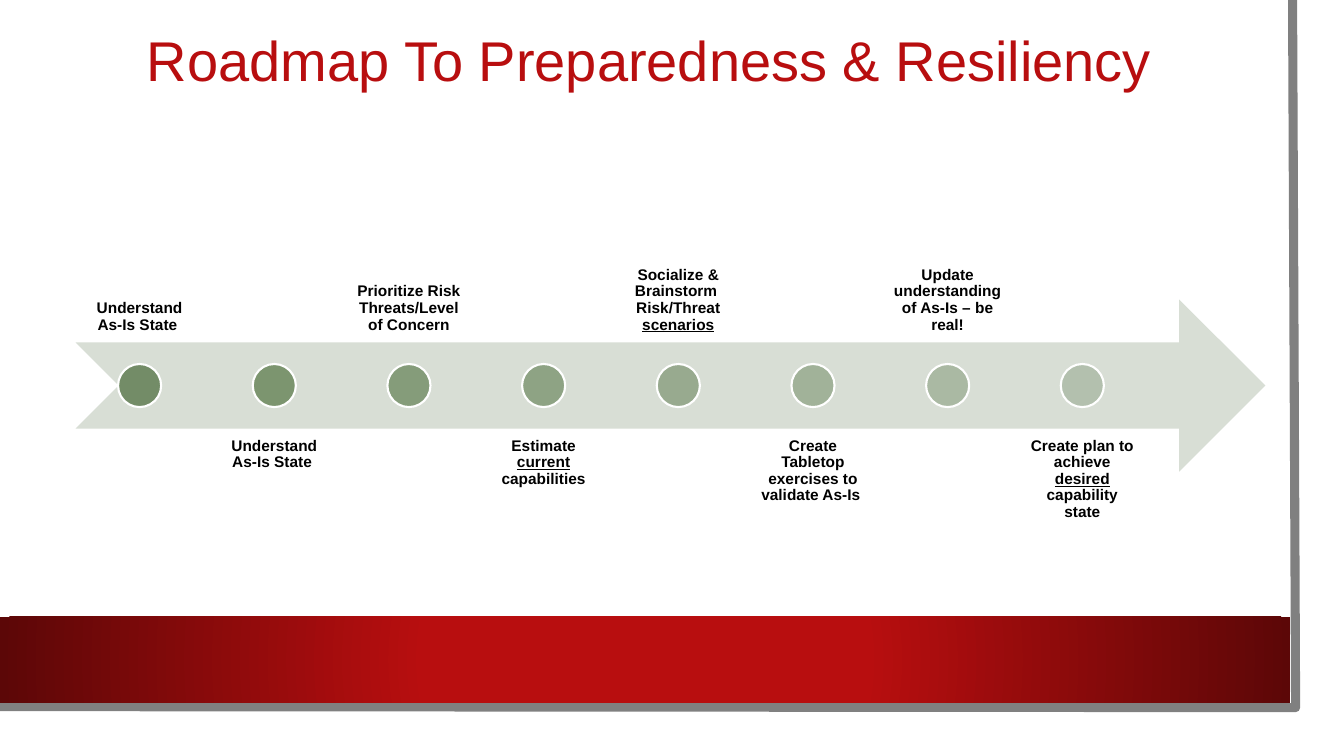
"""Build a roadmap slide with eight milestones along an arrow."""
import lxml.etree
import pptx
import pptx.dml.color
import pptx.enum.shapes
import pptx.enum.text
import pptx.oxml.ns
import pptx.util

WIDE, HIGH = 13.33, 7.5
LEFT, STEP, COL = 0.75, 9.35 / 7, 1.27
TOP, ROW = 2.97, 1.71
DOT = ROW / 4
FONT = "Arial"
KIND = pptx.enum.shapes.MSO_SHAPE
ANCHOR = pptx.enum.text.MSO_ANCHOR

HUES = {
    "page": "FFFFFF", "edge": "808080", "red": "B80E0F", "dark": "5C0707",
    "arrow": "D8DED5", "text": "000000",
    "dot0": "738C67", "dot1": "7C956F", "dot2": "859C7A", "dot3": "8EA384",
    "dot4": "98AA8F", "dot5": "A1B299", "dot6": "AAB9A3", "dot7": "B3C0AE",
}

GOALS = [
    [("Understand As-Is State ", False)],
    [("Understand As-Is State ", False)],
    [("Prioritize Risk Threats/Level of Concern", False)],
    [("Estimate ", False), ("current", True), (" capabilities", False)],
    [("Socialize & Brainstorm \nRisk/Threat ", False), ("scenarios", True)],
    [("Create Tabletop exercises to validate As-Is ", False)],
    [("Update understanding of As-Is – be real!", False)],
    [("Create plan to achieve ", False), ("desired ", True),
     ("capability state", False)],
]


def hue(name):
    """Return the named colour."""
    return pptx.dml.color.RGBColor.from_string(HUES[name])


def box(*sides):
    """Turn inches into slide lengths."""
    return [pptx.util.Inches(side) for side in sides]


def shape(slide, kind, sides, fill):
    """Add a plain filled shape without a line."""
    item = slide.shapes.add_shape(kind, *box(*sides))
    item.shadow.inherit = False
    item.fill.solid()
    item.fill.fore_color.rgb = hue(fill)
    item.line.fill.background()
    return item


def edge(slide):
    """Draw the grey line along the right and bottom of the page."""
    pen = slide.shapes.build_freeform(*box(12.82, 0))
    pen.add_line_segments([box(12.85, 7.02), box(-0.03, 7.01)], close=False)
    line = pen.convert_to_shape()
    line.shadow.inherit = False
    line.fill.background()
    line.line.color.rgb = hue("edge")
    line.line.width = pptx.util.Pt(6.5)


def band(slide):
    """Add the red band that darkens towards its ends."""
    item = shape(slide, KIND.RECTANGLE, (0, 6.12, 12.8, 0.85), "red")
    item.fill.gradient()
    stops = item.fill.gradient_stops
    for stop, name, place in zip(stops, ("red", "dark"), (0.34, 1)):
        stop.color.rgb = hue(name)
        stop.position = place
    qn = pptx.oxml.ns.qn
    lin = item.element.find(".//" + qn("a:lin"))
    ring = lxml.etree.Element(qn("a:path"), path="circle")
    sides = dict.fromkeys("ltrb", "50000")
    lxml.etree.SubElement(ring, qn("a:fillToRect"), sides)
    lin.getparent().replace(lin, ring)


def write(frame, runs, size, name, bold=False):
    """Write centred text run by run."""
    para = frame.paragraphs[0]
    para.alignment = pptx.enum.text.PP_ALIGN.CENTER
    para.line_spacing = 0.9
    for text, under in runs:
        for row, part in enumerate(text.split("\n")):
            if row:
                para.add_line_break()
            run = para.add_run()
            run.text = part
            run.font.name = FONT
            run.font.size = pptx.util.Pt(size)
            run.font.bold = bold
            run.font.underline = under
            run.font.color.rgb = hue(name)


def label(slide, left, top, anchor, runs):
    """Add the text of one milestone."""
    frame = slide.shapes.add_textbox(*box(left, top, COL, ROW)).text_frame
    frame.word_wrap = True
    frame.vertical_anchor = anchor
    (frame.margin_left, frame.margin_top,
     frame.margin_right, frame.margin_bottom) = box(*[0.09] * 4)
    write(frame, runs, 11, "text", True)


def goal(slide, spot, runs):
    """Add one milestone, above the arrow when even and below when odd."""
    left = LEFT + spot * STEP
    if spot % 2:
        label(slide, left, TOP + 0.75 * ROW, ANCHOR.TOP, runs)
    else:
        label(slide, left, TOP - 0.75 * ROW, ANCHOR.BOTTOM, runs)
    sides = (left + (COL - DOT) / 2, TOP + (ROW - DOT) / 2, DOT, DOT)
    dot = shape(slide, KIND.OVAL, sides, f"dot{spot}")
    dot.line.color.rgb = hue("page")
    dot.line.width = pptx.util.Pt(1.5)


def title(slide, text):
    """Place the title in front and format it."""
    head = slide.shapes.title
    head.left, head.top, head.width, head.height = box(LEFT, 0, 11.37, 1.26)
    frame = head.text_frame
    frame.auto_size = pptx.enum.text.MSO_AUTO_SIZE.NONE
    frame.vertical_anchor = ANCHOR.MIDDLE
    write(frame, [(text, False)], 40, "red")
    head.element.getparent().append(head.element)


def main():
    """Build and save the slide."""
    deck = pptx.Presentation()
    deck.slide_width, deck.slide_height = box(WIDE, HIGH)
    slide = deck.slides.add_slide(deck.slide_layouts[5])
    shape(slide, KIND.RECTANGLE, (0, 0, 13.1, 7.27), "page")
    edge(slide)
    band(slide)
    shape(slide, KIND.NOTCHED_RIGHT_ARROW, (LEFT, TOP, 11.8, ROW), "arrow")
    for spot, runs in enumerate(GOALS):
        goal(slide, spot, runs)
    title(slide, "Roadmap To Preparedness & Resiliency")
    deck.save("out.pptx")


if __name__ == "__main__":
    main()
